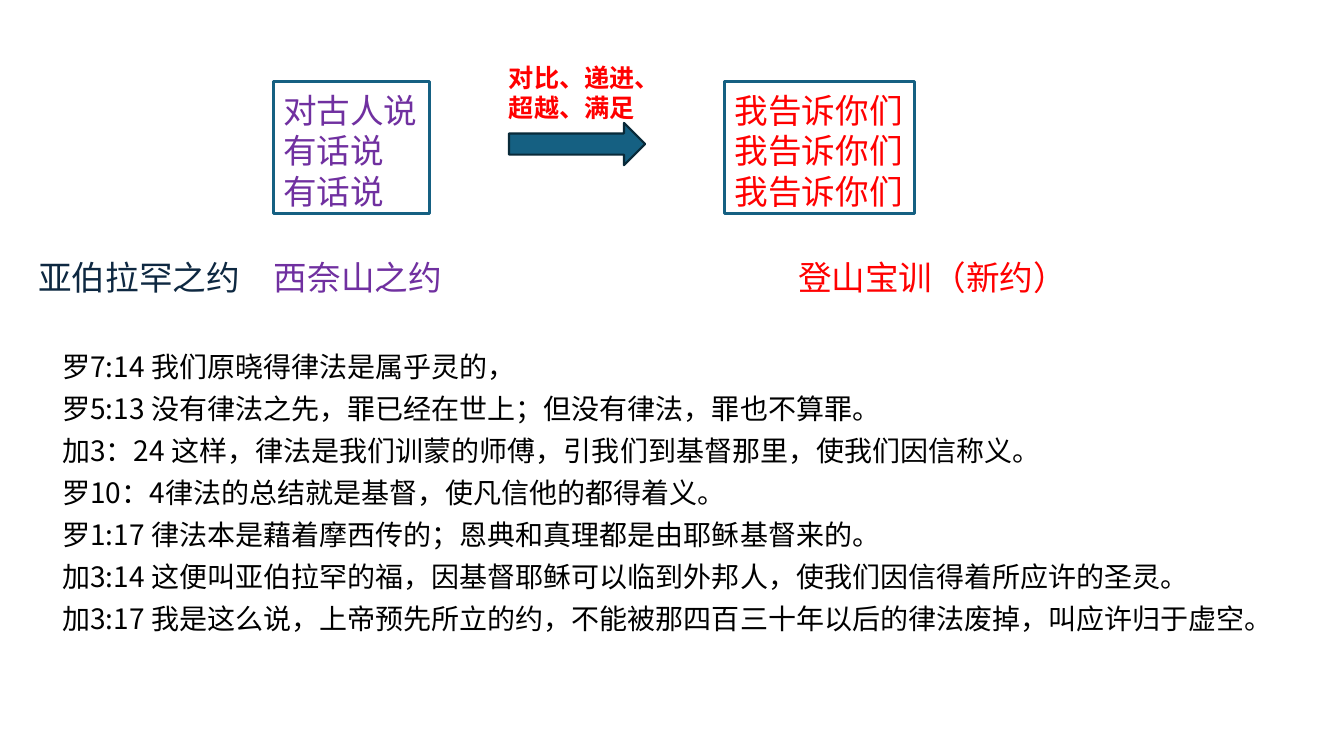
from lxml.etree import SubElement
from pptx import Presentation
from pptx.dml.color import RGBColor
from pptx.enum.shapes import MSO_SHAPE as Shape
from pptx.enum.text import MSO_AUTO_SIZE as Fit
from pptx.oxml.ns import qn
from pptx.util import Pt

FACE = "Noto Sans CJK SC"
PURPLE = RGBColor(0x70, 0x30, 0xA0)
RED = RGBColor(0xFF, 0x00, 0x00)
NAVY = RGBColor(0x0E, 0x28, 0x41)
BLACK = RGBColor(0x00, 0x00, 0x00)
TEAL = RGBColor(0x15, 0x60, 0x82)
DARK = RGBColor(0x09, 0x2A, 0x39)

deck = Presentation()
deck.slide_width, deck.slide_height = Pt(960), Pt(540)
slide = deck.slides.add_slide(deck.slide_layouts[6])


def write(place, lines, size, color, wrap=False, bold=None, after=0):
    box = slide.shapes.add_textbox(*map(Pt, place))
    frame = box.text_frame
    shift = size * 0.1
    style = {"word_wrap": wrap, "auto_size": Fit.SHAPE_TO_FIT_TEXT,
             "margin_top": Pt(3.6 + shift), "margin_bottom": Pt(3.6 - shift)}
    for key, value in style.items():
        setattr(frame, key, value)
    frame.text = "\n".join(lines)
    for para in frame.paragraphs:
        para.line_spacing = Pt(size * 1.2)
        para.space_after = Pt(after)
        font = para.runs[0].font
        for key, value in {"name": FACE, "size": Pt(size), "bold": bold}.items():
            setattr(font, key, value)
        font.color.rgb = color
        SubElement(para.runs[0].font._element, qn("a:ea"), typeface=FACE)
    return box


old = write((195.1, 58.3, 111.6, 94.3), ["对古人说", "有话说", "有话说"], 24, PURPLE)
new = write((517.7, 58.3, 135.4, 94.3), ["我告诉你们"] * 3, 24, RED)
for box in (old, new):
    box.line.color.rgb = TEAL
    box.line.width = Pt(2.25)

arrow = slide.shapes.add_shape(Shape.RIGHT_ARROW, Pt(363.6), Pt(87.8), Pt(97.2), Pt(30.2))
arrow.shadow.inherit = False
arrow.fill.solid()
arrow.fill.fore_color.rgb = TEAL
arrow.line.color.rgb = DARK
arrow.line.width = Pt(1.5)

for left, width, name, color in (
    (188.6, 135.4, "西奈山之约", PURPLE),
    (563, 208.1, "登山宝训（新约）", RED),
    (20.2, 159.8, "亚伯拉罕之约", NAVY),
):
    write((left, 177.8, width, 36), [name], 24, color)

verses = [
    "罗7:14 我们原晓得律法是属乎灵的，",
    "罗5:13 没有律法之先，罪已经在世上；但没有律法，罪也不算罪。",
    "加3：24 这样，律法是我们训蒙的师傅，引我们到基督那里，使我们因信称义。",
    "罗10：4律法的总结就是基督，使凡信他的都得着义。",
    "罗1:17 律法本是藉着摩西传的；恩典和真理都是由耶稣基督来的。",
    "加3:14 这便叫亚伯拉罕的福，因基督耶稣可以临到外邦人，使我们因信得着所应许的圣灵。",
    "加3:17 我是这么说，上帝预先所立的约，不能被那四百三十年以后的律法废掉，叫应许归于虚空。",
]
write((37.4, 244.1, 861.1, 213.1), verses, 20, BLACK, wrap=True, after=6)
write((356.4, 38.9, 111.6, 51.1), ["对比、递进、", "超越、满足"], 18, RED, wrap=True, bold=True)

deck.save("out.pptx")
